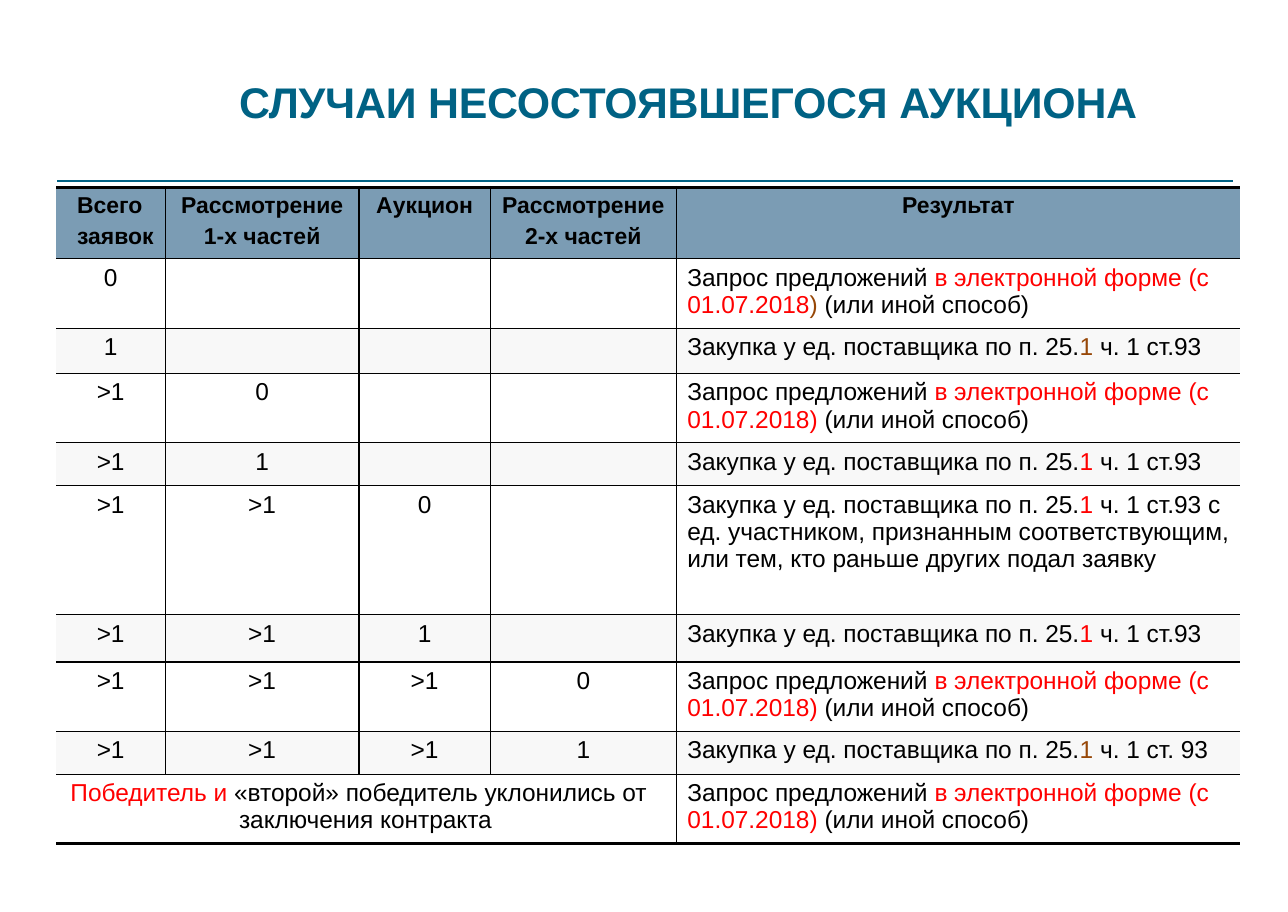
from dataclasses import dataclass
from typing import Optional

import pptx
import pptx.dml.color
import pptx.enum.shapes
import pptx.enum.text
import pptx.oxml.ns
import pptx.util
from lxml import etree

PX = 9144  # EMU in one px, 100 px to the inch
LEFT, CENTER = pptx.enum.text.PP_ALIGN.LEFT, pptx.enum.text.PP_ALIGN.CENTER
qn = pptx.oxml.ns.qn


@dataclass(frozen=True)
class Theme:
    font: str = "Arial"
    teal: str = "006284"
    black: str = "000000"
    red: str = "FF0000"
    brown: str = "974707"
    header: str = "7B9CB4"
    white: str = "FFFFFF"
    band: str = "F8F8F8"
    title_pt: int = 28
    header_pt: int = 15
    body_pt: int = 16
    line_pt: float = 1.0
    edge_pt: float = 2.25


THEME = Theme()


@dataclass(frozen=True)
class Run:
    text: str
    color: Optional[str] = None


@dataclass(frozen=True)
class Para:
    runs: tuple[Run, ...]
    align: pptx.enum.text.PP_ALIGN = CENTER
    left: int = 0
    indent: int = 0
    before: float = 3.2


@dataclass(frozen=True)
class Row:
    height: int
    cells: tuple[tuple[Para, ...], ...]


def px(n: int) -> pptx.util.Emu:
    return pptx.util.Emu(n * PX)


def rgb(color: str) -> pptx.dml.color.RGBColor:
    return pptx.dml.color.RGBColor.from_string(color)


def heading(*lines: str, align: pptx.enum.text.PP_ALIGN = CENTER, left: int = 0) -> tuple[Para, ...]:
    return tuple(Para((Run(line),), align, left, before=3.6 if i else 3.2)
                 for i, line in enumerate(lines))


def counts(*values: str) -> tuple[tuple[Para, ...], ...]:
    """The four narrow cells of a row, the unused ones empty."""
    padded = values + ("",) * (4 - len(values))
    return tuple((Para((Run(v),) if v else ()),) for v in padded)


def result(*runs: Run) -> tuple[Para, ...]:
    return (Para(runs, LEFT, left=10),)


def request(bracket: str = THEME.red) -> tuple[Para, ...]:
    return result(Run("Запрос предложений "),
                  Run("в электронной форме (с 01.07.2018", THEME.red),
                  Run(") ", bracket), Run("(или иной способ)"))


def purchase(color: str = THEME.red, ending: str = "ч. 1 ст.93") -> tuple[Para, ...]:
    return result(Run("Закупка у ед. поставщика по п. 25."), Run("1 ", color), Run(ending))


LONG_ENDING = ("ч. 1 ст.93 с ед. участником, признанным соответствующим, "
               "или тем, кто раньше других подал заявку")
WINNERS = (Para((Run("Победитель и ", THEME.red),
                 Run("«второй» победитель уклонились от заключения контракта")),
                LEFT, left=166, indent=-153),)

COLUMNS = (99, 176, 119, 169, 512)
ROWS = (
    Row(65, (heading("Всего", "заявок", align=LEFT, left=19),
             heading("Рассмотрение", "1-х частей"), heading("Аукцион"),
             heading("Рассмотрение", "2-х частей"), heading("Результат"))),
    Row(63, (*counts("0"), request(THEME.brown))),
    Row(41, (*counts("1"), purchase(THEME.brown))),
    Row(63, (*counts(">1", "0"), request())),
    Row(39, (*counts(">1", "1"), purchase())),
    Row(117, (*counts(">1", ">1", "0"), purchase(ending=LONG_ENDING))),
    Row(43, (*counts(">1", ">1", "1"), purchase())),
    Row(63, (*counts(">1", ">1", ">1", "0"), request())),
    Row(39, (*counts(">1", ">1", ">1", "1"), purchase(THEME.brown, "ч. 1 ст. 93"))),
    Row(63, (WINNERS, *counts()[1:], request())),
)


def write(tf: pptx.text.text.TextFrame, paras: tuple[Para, ...], size: int,
          color: str, bold: bool) -> None:
    tf.word_wrap = True
    for i, para in enumerate(paras):
        p = tf.add_paragraph() if i else tf.paragraphs[0]
        p.alignment = para.align
        p.space_before = pptx.util.Pt(para.before)
        p.font.name, p.font.size, p.font.bold = THEME.font, pptx.util.Pt(size), bold
        p.font.color.rgb = rgb(color)
        pPr = p._p.get_or_add_pPr()
        pPr.set("marL", str(px(para.left)))
        pPr.set("indent", str(px(para.indent)))
        for run in para.runs:
            r = p.add_run()
            r.text = run.text
            if run.color:
                r.font.color.rgb = rgb(run.color)


def set_borders(cell: pptx.table._Cell, **widths: float) -> None:
    """Draw the sides L, R, T and B in that order; a width of 0 hides a side."""
    tcPr = cell._tc.get_or_add_tcPr()
    for side, width in widths.items():
        ln = etree.SubElement(tcPr, qn(f"a:ln{side}"), w=str(pptx.util.Pt(width)))
        if width:
            fill = etree.SubElement(ln, qn("a:solidFill"))
            etree.SubElement(fill, qn("a:srgbClr"), val=THEME.black)
        else:
            etree.SubElement(ln, qn("a:noFill"))


def add_title(s: pptx.slide.Slide, text: str) -> None:
    tf = s.shapes.add_textbox(px(210), px(68), px(829), px(49)).text_frame
    tf.margin_left = tf.margin_right = tf.margin_bottom = 0
    tf.margin_top = px(1)
    write(tf, (Para((Run(text),), before=0.9),), THEME.title_pt, THEME.teal, True)
    tf.paragraphs[0].runs[0].font._element.set("spc", "-10")


def add_rule(s: pptx.slide.Slide) -> None:
    line = s.shapes.add_connector(pptx.enum.shapes.MSO_CONNECTOR.STRAIGHT,
                                  px(52), px(164), px(1119), px(164))
    line.line.color.rgb = rgb(THEME.teal)
    line.line.width = pptx.util.Pt(1.42)
    etree.SubElement(line._element.spPr, qn("a:effectLst"))


def add_cases(s: pptx.slide.Slide) -> None:
    table = s.shapes.add_table(len(ROWS), len(COLUMNS), px(51), px(170), px(sum(COLUMNS)),
                               px(sum(row.height for row in ROWS))).table
    table.first_row = table.horz_banding = False
    for column, width in zip(table.columns, COLUMNS):
        column.width = px(width)
    last_row, last_col = len(ROWS) - 1, len(COLUMNS) - 1
    table.cell(last_row, 0).merge(table.cell(last_row, last_col - 1))
    for i, row in enumerate(ROWS):
        table.rows[i].height = px(row.height)
        header = i == 0
        fill = THEME.header if header else THEME.white if i % 2 else THEME.band
        for j, paras in enumerate(row.cells):
            cell = table.cell(i, j)
            cell.margin_left = cell.margin_right = cell.margin_bottom = 0
            cell.margin_top = px(5)
            inner = 0 if cell.is_spanned else THEME.line_pt
            set_borders(cell, L=inner if j else 0, R=inner if j < last_col else 0,
                        T=THEME.edge_pt if header else THEME.line_pt,
                        B=THEME.edge_pt if i == last_row else THEME.line_pt)
            cell.fill.solid()
            cell.fill.fore_color.rgb = rgb(fill)
            write(cell.text_frame, paras, THEME.header_pt if header else THEME.body_pt,
                  THEME.black, header)


def main() -> None:
    prs = pptx.Presentation()
    prs.slide_width, prs.slide_height = px(1169), px(828)
    s = prs.slides.add_slide(prs.slide_layouts[6])
    add_rule(s)
    add_title(s, "СЛУЧАИ НЕСОСТОЯВШЕГОСЯ АУКЦИОНА")
    add_cases(s)
    prs.save("out.pptx")


if __name__ == "__main__":
    main()
